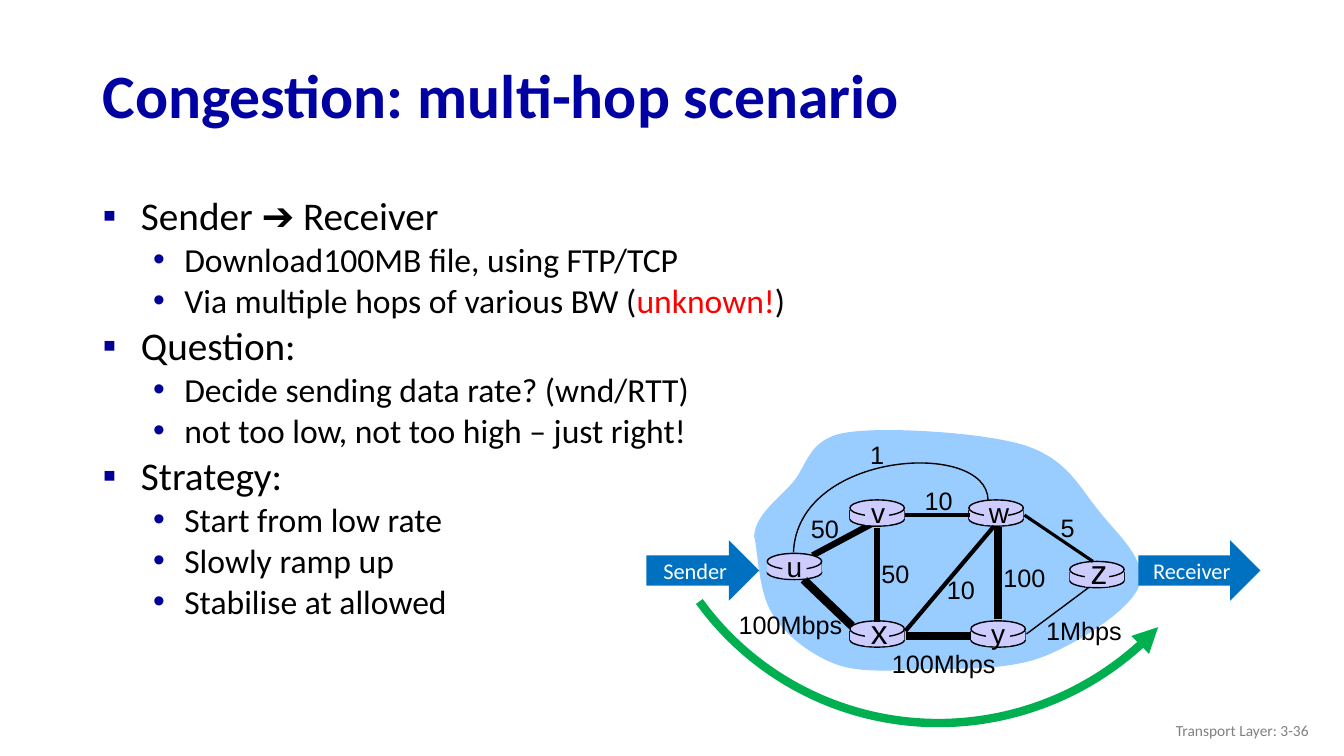
from dataclasses import dataclass

import lxml.etree
import pptx
import pptx.dml.color
import pptx.enum.shapes
import pptx.enum.text
import pptx.oxml.ns
import pptx.util

RGBColor = pptx.dml.color.RGBColor
Shape = pptx.enum.shapes.MSO_SHAPE
Align = pptx.enum.text.PP_ALIGN
Anchor = pptx.enum.text.MSO_ANCHOR

BLACK = RGBColor(0x00, 0x00, 0x00)
WHITE = RGBColor(0xFF, 0xFF, 0xFF)
TITLE_BLUE = RGBColor(0x00, 0x00, 0xA3)
BULLET_BLUE = RGBColor(0x00, 0x00, 0x99)
ALERT_RED = RGBColor(0xFF, 0x00, 0x00)
FOOTER_GRAY = RGBColor(0x80, 0x80, 0x80)
CLOUD_BLUE = RGBColor(0x99, 0xCC, 0xFF)
ROUTER_LILAC = RGBColor(0xCC, 0xCC, 0xFF)
ARROW_BLUE = RGBColor(0x00, 0x70, 0xC0)
PATH_GREEN = RGBColor(0x00, 0xB0, 0x50)

EMU_PER_PX = 9144
ROUTER_WIDTH = 54

Point = tuple[int, int]
Area = tuple[int, int, int, int]


@dataclass(frozen=True)
class Router:
    name: str
    x: int
    y: int
    name_center: int
    size: int = 20


@dataclass(frozen=True)
class Link:
    start: Point
    end: Point
    weight: float


@dataclass(frozen=True)
class Label:
    text: str
    x: int
    y: int
    width: int


@dataclass(frozen=True)
class Host:
    name: str
    x: int
    width: int


@dataclass(frozen=True)
class Bullet:
    text: str
    level: int = 0
    alert: str = ""
    tail: str = ""


@dataclass(frozen=True)
class BulletStyle:
    symbol: str
    size: int
    margin: int
    hanging: int


ROUTERS = [
    Router("u", 761, 549, 788),
    Router("x", 843, 616, 872, 24),
    Router("v", 843, 496, 871),
    Router("w", 961, 496, 989),
    Router("y", 963, 616, 990),
    Router("z", 1061, 557, 1090, 24),
]
UV_LINK = Link((806, 551), (866, 519), 4.5)
LINKS = [
    Link((990, 523), (990, 614), 6),
    Link((870, 524), (870, 617), 4.5),
    Link((898, 626), (986, 522), 3),
    Link((1018, 629), (1081, 582), 1),
    Link((963, 631), (899, 631), 6),
    Link((845, 621), (797, 575), 6),
    Link((962, 511), (898, 511), 3),
    Link((1084, 557), (1016, 511), 2.25),
]
LABELS = [
    Label("50", 794, 504, 48),
    Label("50", 864, 549, 48),
    Label("100Mbps", 722, 600, 124),
    Label("10", 929, 565, 48),
    Label("100Mbps", 874, 638, 124),
    Label("100", 985, 553, 62),
    Label("1Mbps", 1027, 606, 96),
    Label("5", 1042, 503, 34),
    Label("10", 907, 477, 48),
    Label("1", 853, 431, 34),
]
HOSTS = [Host("Sender", 641, 112), Host("Receiver", 1129, 121)]
STYLES = [BulletStyle("▪", 28, 38, 38), BulletStyle("•", 24, 81, 31)]
BULLETS = [
    Bullet("Sender ➔ Receiver"),
    Bullet("Download100MB file, using FTP/TCP", 1),
    Bullet("Via multiple hops of various BW (", 1, "unknown!", ")"),
    Bullet("Question:"),
    Bullet("Decide sending data rate? (wnd/RTT)", 1),
    Bullet("not too low, not too high – just right!", 1),
    Bullet("Strategy:"),
    Bullet("Start from low rate", 1),
    Bullet("Slowly ramp up", 1),
    Bullet("Stabilise at allowed", 1),
]
CLOUD = [
    (748, 532), (749, 511), (771, 496), (786, 479), (801, 462), (801, 435), (840, 429),
    (878, 423), (976, 429), (1017, 442), (1059, 456), (1071, 484), (1090, 507),
    (1108, 530), (1139, 556), (1130, 581), (1121, 605), (1071, 637), (1036, 651),
    (1001, 665), (955, 663), (920, 664), (886, 665), (854, 668), (829, 659),
    (803, 649), (779, 630), (766, 609), (752, 587), (752, 548), (748, 532),
]
UW_CURVE = [(980, 496), (979, 436), (791, 447), (787, 548)]


def px(length: float) -> pptx.util.Emu:
    return pptx.util.Emu(round(length * EMU_PER_PX))


def add_xml(parent, tag: str, **attributes: str):
    return lxml.etree.SubElement(parent, pptx.oxml.ns.qn(tag), attributes)


def style_span(span, size: int, color: RGBColor, font: str, bold: bool = False) -> None:
    span.font.size = pptx.util.Pt(size)
    span.font.color.rgb = color
    span.font.name = font
    span.font.bold = bold


def add_text(page, text: str, area: Area, size: int, color: RGBColor, font: str,
             align=Align.LEFT, bold: bool = False, wrap: bool = True):
    frame = page.shapes.add_textbox(*map(px, area)).text_frame
    frame.text = text
    frame.word_wrap = wrap
    frame.vertical_anchor = Anchor.MIDDLE if wrap else Anchor.TOP
    if not wrap:
        frame.auto_size = pptx.enum.text.MSO_AUTO_SIZE.SHAPE_TO_FIT_TEXT
    para = frame.paragraphs[0]
    para.alignment = align
    style_span(para.runs[0], size, color, font, bold)
    return para


def add_box(page, kind, area: Area, fill: RGBColor, outlined: bool = False):
    box = page.shapes.add_shape(kind, *map(px, area))
    box.shadow.inherit = False
    box.fill.solid()
    box.fill.fore_color.rgb = fill
    if outlined:
        box.line.color.rgb = BLACK
        box.line.width = pptx.util.Pt(1)
    else:
        box.line.fill.background()
    return box


def add_link(page, link: Link) -> None:
    line = page.shapes.add_connector(pptx.enum.shapes.MSO_CONNECTOR.STRAIGHT,
                                     *map(px, link.start + link.end))
    line.line.color.rgb = BLACK
    line.line.width = pptx.util.Pt(link.weight)
    add_xml(line._element.spPr, "a:effectLst")


def add_curve(page, controls: list[Point], closed: bool):
    builder = page.shapes.build_freeform(*controls[0], scale=EMU_PER_PX)
    builder.add_line_segments(controls[1:], close=closed)
    curve = builder.convert_to_shape()
    curve.shadow.inherit = False
    segments = list(curve._element.iter(pptx.oxml.ns.qn("a:lnTo")))
    for first in range(0, len(segments), 3):
        bezier = lxml.etree.Element(pptx.oxml.ns.qn("a:cubicBezTo"))
        segments[first].addprevious(bezier)
        for segment in segments[first:first + 3]:
            bezier.append(segment[0])
            segment.getparent().remove(segment)
    return curve


def add_router(page, router: Router) -> None:
    x, y, right = router.x, router.y, router.x + ROUTER_WIDTH
    add_box(page, Shape.OVAL, (x, y + 12, ROUTER_WIDTH, 14), ROUTER_LILAC, True)
    for side in (x, right):
        add_link(page, Link((side, y + 10), (side, y + 19), 1))
    add_box(page, Shape.RECTANGLE, (x, y + 10, ROUTER_WIDTH, 9), ROUTER_LILAC)
    add_box(page, Shape.OVAL, (x, y, ROUTER_WIDTH, 16), ROUTER_LILAC, True)


def add_router_name(page, router: Router) -> None:
    add_box(page, Shape.RECTANGLE, (router.x + 15, router.y + 2, 24, 23), ROUTER_LILAC)
    top = router.y + 21 - router.size * 3 // 2
    add_text(page, router.name, (router.name_center - 18, top, 36, 2 * router.size + 2),
             router.size, BLACK, "Arial", Align.CENTER, wrap=False)


def add_host(page, host: Host) -> None:
    arrow = add_box(page, Shape.RIGHT_ARROW, (host.x, 536, host.width, 60), ARROW_BLUE)
    arrow.text_frame.text = host.name
    arrow.text_frame.vertical_anchor = Anchor.MIDDLE
    para = arrow.text_frame.paragraphs[0]
    para.alignment = Align.CENTER
    style_span(para.runs[0], 16, WHITE, "Calibri")


def add_bullets(page) -> None:
    frame = page.shapes.add_textbox(*map(px, (92, 192, 850, 508))).text_frame
    frame.word_wrap = True
    for index, bullet in enumerate(BULLETS):
        para = frame.add_paragraph() if index else frame.paragraphs[0]
        style = STYLES[bullet.level]
        para.text = bullet.text
        para.level = bullet.level
        para.line_spacing = 0.85
        for extra in filter(None, (bullet.alert, bullet.tail)):
            para.add_run().text = extra
        for span in para.runs:
            color = ALERT_RED if span.text == bullet.alert else BLACK
            style_span(span, style.size, color, "Calibri")
        props = para._p.get_or_add_pPr()
        props.set("marL", str(px(style.margin)))
        props.set("indent", str(px(-style.hanging)))
        add_xml(add_xml(props, "a:spcBef"), "a:spcPct", val="20000")
        add_xml(add_xml(props, "a:buClr"), "a:srgbClr", val=str(BULLET_BLUE))
        add_xml(props, "a:buFont", typeface="Arial")
        add_xml(props, "a:buChar", char=style.symbol)


def add_network(page) -> None:
    cloud = add_curve(page, CLOUD, True)
    cloud.fill.solid()
    cloud.fill.fore_color.rgb = CLOUD_BLUE
    cloud.line.fill.background()
    add_link(page, UV_LINK)
    for router in ROUTERS:
        add_router(page, router)
    for link in LINKS:
        add_link(page, link)
    curve = add_curve(page, UW_CURVE, False)
    curve.fill.background()
    curve.line.color.rgb = BLACK
    curve.line.width = pptx.util.Pt(1)
    for router in ROUTERS:
        add_router_name(page, router)
    for label in LABELS:
        add_text(page, label.text, (label.x, label.y, label.width, 40),
                 18, BLACK, "Arial", Align.CENTER, wrap=False)


def add_path_arc(page) -> None:
    arc = page.shapes.add_shape(Shape.ARC, *map(px, (637, 129, 593, 587)))
    arc.shadow.inherit = False
    arc.rotation = 138.6
    arc.adjustments[0] = 158.56
    arc.adjustments[1] = 3.25
    arc.fill.background()
    arc.line.color.rgb = PATH_GREEN
    arc.line.width = pptx.util.Pt(6)
    add_xml(arc.line._get_or_add_ln(), "a:headEnd", type="triangle")


def main() -> None:
    deck = pptx.Presentation()
    deck.slide_width, deck.slide_height = px(1333), px(750)
    page = deck.slides.add_slide(deck.slide_layouts[6])
    title = add_text(page, "Congestion: multi-hop scenario", (92, 49, 1150, 98),
                     44, TITLE_BLUE, "Calibri", bold=True)
    title.line_spacing = 0.9
    add_text(page, "Transport Layer: 3-36", (1008, 705, 300, 40),
             11, FOOTER_GRAY, "Calibri", Align.RIGHT)
    add_network(page)
    for host in HOSTS:
        add_host(page, host)
    add_bullets(page)
    add_path_arc(page)
    deck.save("out.pptx")


if __name__ == "__main__":
    main()
